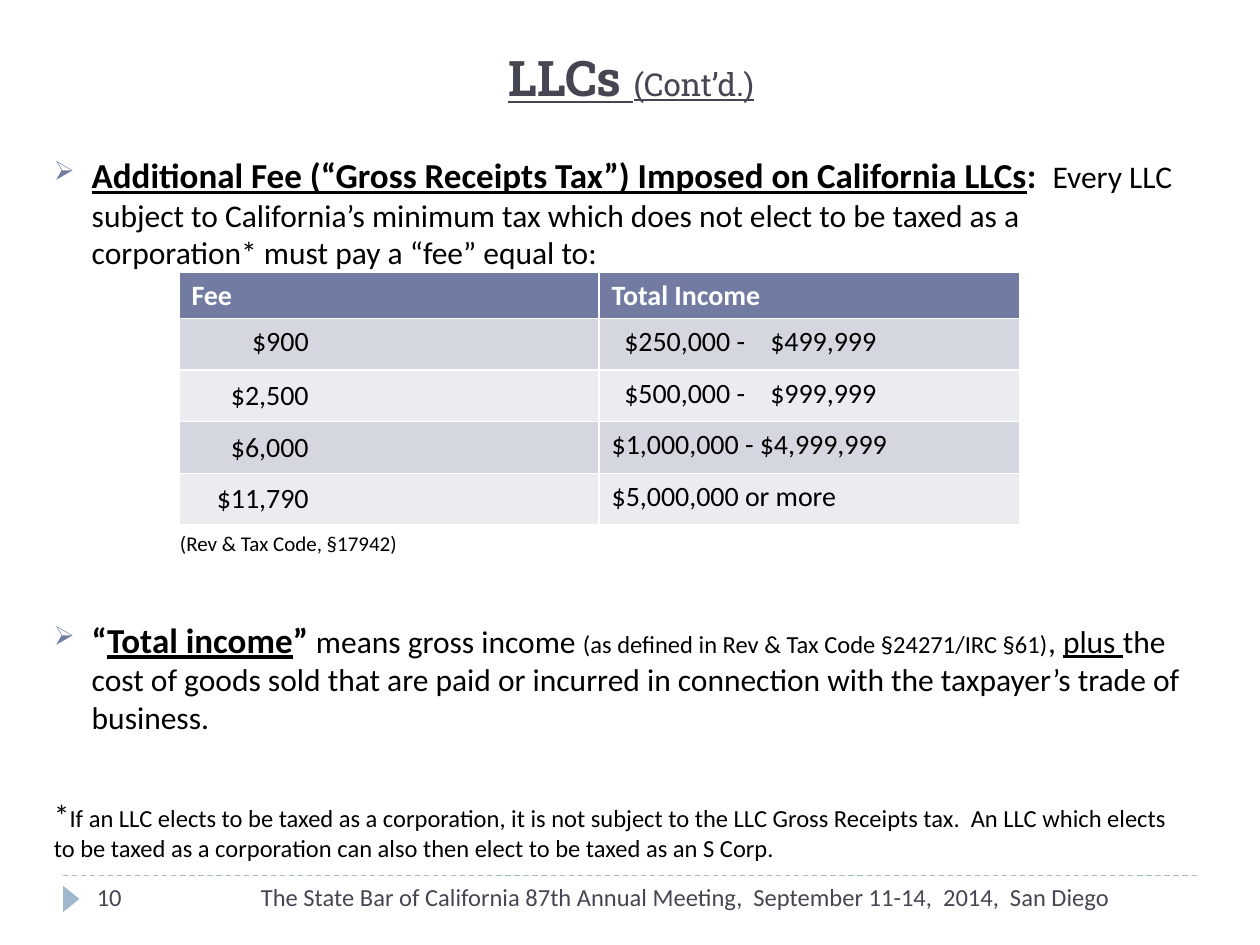
import pptx
import pptx.util
import pptx.dml.color
import pptx.enum.dml
import pptx.enum.shapes
import pptx.enum.text
import pptx.oxml
import pptx.oxml.ns
from lxml import etree

Inches = pptx.util.Inches
Pt = pptx.util.Pt
RGBColor = pptx.dml.color.RGBColor
qn = pptx.oxml.ns.qn
ALIGN = pptx.enum.text.PP_ALIGN
ANCHOR = pptx.enum.text.MSO_ANCHOR

SLATE = RGBColor(0x46, 0x46, 0x53)
INDIGO = RGBColor(0x72, 0x7C, 0xA3)
SKY = RGBColor(0x9F, 0xB8, 0xCD)
BAND_DARK = RGBColor(0xD5, 0xD7, 0xE0)
BAND_LIGHT = RGBColor(0xEB, 0xEC, 0xF0)
BLACK = RGBColor(0, 0, 0)
WHITE = RGBColor(0xFF, 0xFF, 0xFF)


def add_run(paragraph, text, size, color=BLACK, bold=False, underline=False, font="Calibri"):
    run = paragraph.add_run()
    run.text = text
    run.font.name = font
    run.font.size = Pt(size)
    run.font.bold = bold
    run.font.underline = underline
    run.font.color.rgb = color


def add_textbox(left, top, width, height):
    box = slide.shapes.add_textbox(Inches(left), Inches(top), Inches(width), Inches(height))
    box.text_frame.word_wrap = True
    return box.text_frame


prs = pptx.Presentation()
prs.slide_width = Inches(10)
prs.slide_height = Inches(7.5)
slide = prs.slides.add_slide(prs.slide_layouts[5])

title = slide.shapes.title
title.left, title.top = Inches(0.51), Inches(0.33)
title.width, title.height = Inches(9), Inches(0.67)
title.text_frame.auto_size = pptx.enum.text.MSO_AUTO_SIZE.NONE
title.text_frame.vertical_anchor = ANCHOR.TOP
heading = title.text_frame.paragraphs[0]
heading.alignment = ALIGN.CENTER
add_run(heading, "LLCs ", 28, SLATE, bold=True, underline=True, font="Roboto Slab")
add_run(heading, "(Cont’d.)", 18, SLATE, underline=True, font="Roboto Slab")

footer_rule = slide.shapes.add_connector(
    pptx.enum.shapes.MSO_CONNECTOR.STRAIGHT, Inches(0.5), Inches(6.95), Inches(9.5), Inches(6.95))
footer_rule.line.color.rgb = SKY
footer_rule.line.width = Pt(0.75)
footer_rule.line.dash_style = pptx.enum.dml.MSO_LINE.DASH
etree.SubElement(footer_rule._element.spPr, qn("a:effectLst"))

page_marker = slide.shapes.add_shape(
    pptx.enum.shapes.MSO_SHAPE.ISOSCELES_TRIANGLE,
    Inches(0.46), Inches(7.07), Inches(0.21), Inches(0.13))
page_marker.rotation = 90
page_marker.shadow.inherit = False
page_marker.fill.solid()
page_marker.fill.fore_color.rgb = SKY
page_marker.line.fill.background()

meeting = add_textbox(1.58, 6.95, 7.33, 0.4).paragraphs[0]
meeting.alignment = ALIGN.RIGHT
add_run(meeting, "The State Bar of California 87th Annual Meeting,  "
        "September 11-14,  2014,  San Diego", 14, SLATE)
page_number = add_textbox(0.67, 6.95, 2.17, 0.4).paragraphs[0]
add_run(page_number, "10", 14, SLATE)

body = add_textbox(0.33, 1.17, 9.17, 5.58)
fee_rule = body.paragraphs[0]
citation, income_rule, footnote = [body.add_paragraph() for _ in range(3)]
for paragraph, gap in ((citation, 148), (income_rule, 36), (footnote, 34)):
    paragraph.space_before = Pt(gap)

citation._p.get_or_add_pPr().set("marL", str(Inches(1)))
for paragraph in (fee_rule, income_rule):
    properties = paragraph._p.get_or_add_pPr()
    properties.set("marL", str(Inches(0.3)))
    properties.set("indent", str(Inches(-0.3)))
    bullet_color = etree.SubElement(properties, qn("a:buClr"))
    etree.SubElement(bullet_color, qn("a:srgbClr"), val=str(INDIGO))
    etree.SubElement(properties, qn("a:buSzPct"), val="76000")
    etree.SubElement(properties, qn("a:buChar"), char="➢")

add_run(fee_rule, "Additional Fee (“Gross Receipts Tax”) Imposed on California LLCs",
        20, bold=True, underline=True)
add_run(fee_rule, ":  ", 20, bold=True)
add_run(fee_rule, "Every LLC subject to California’s minimum tax which does not elect "
        "to be taxed as a corporation* must pay a “fee” equal to:", 18)

add_run(citation, "(Rev & Tax Code, §17942)", 12)

add_run(income_rule, "“", 20, bold=True)
add_run(income_rule, "Total income", 20, bold=True, underline=True)
add_run(income_rule, "” ", 20, bold=True)
add_run(income_rule, "means gross income ", 18)
add_run(income_rule, "(as defined in Rev & Tax Code §24271/IRC §61)", 14)
add_run(income_rule, ", ", 18)
add_run(income_rule, "plus ", 18, underline=True)
add_run(income_rule, "the cost of goods sold that are paid or incurred in connection "
        "with the taxpayer’s trade of business.", 18)

add_run(footnote, "*", 18)
add_run(footnote, "If an LLC elects to be taxed as a corporation, it is not subject to "
        "the LLC Gross Receipts tax.  An LLC which elects to be taxed as a corporation "
        "can also then elect to be taxed as an S Corp.", 14)

fee_rows = [
    ("Fee", "Total Income"),
    ("\t$900", "  $250,000 -    $499,999"),
    ("\t$2,500", "  $500,000 -    $999,999"),
    ("\t$6,000", "$1,000,000 - $4,999,999"),
    ("\t$11,790", "$5,000,000 or more"),
]
fee_table = slide.shapes.add_table(
    len(fee_rows), 2, Inches(1.42), Inches(2.16), Inches(6.67), Inches(1.99)).table
for row_index, row in enumerate(fee_rows):
    is_header = row_index == 0
    fee_table.rows[row_index].height = Inches(0.36 if is_header else 0.41)
    band = INDIGO if is_header else BAND_DARK if row_index % 2 else BAND_LIGHT
    for column_index, text in enumerate(row):
        cell = fee_table.cell(row_index, column_index)
        cell.fill.solid()
        cell.fill.fore_color.rgb = band
        entry = cell.text_frame.paragraphs[0]
        add_run(entry, text, 16, WHITE if is_header else BLACK, bold=is_header)
        if column_index == 0 and not is_header:
            tabs = etree.SubElement(entry._p.get_or_add_pPr(), qn("a:tabLst"))
            etree.SubElement(tabs, qn("a:tab"), pos=str(Inches(0.93)), algn="r")
            if row_index > 1:
                cell.vertical_anchor = ANCHOR.MIDDLE

prs.save("out.pptx")
